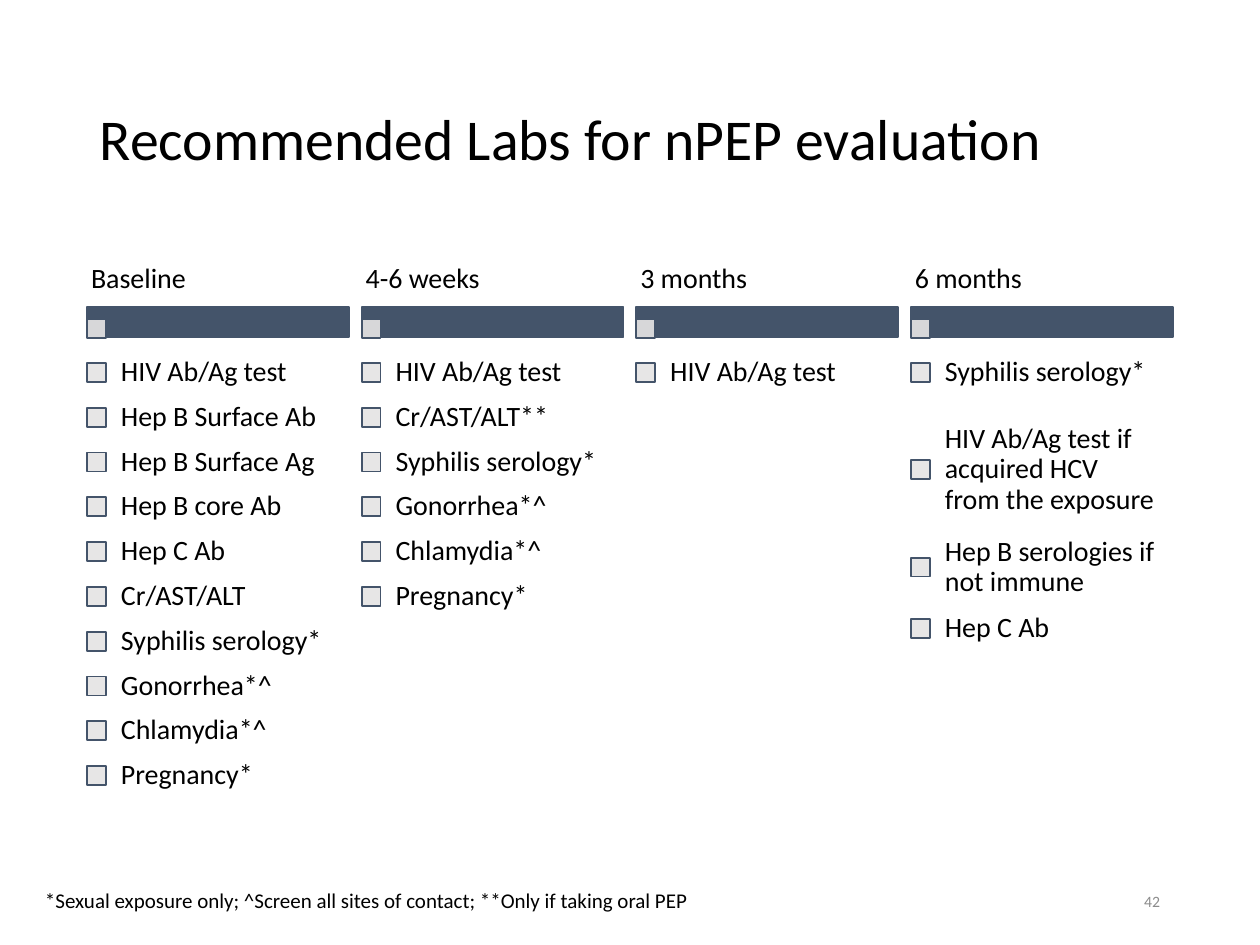
from lxml import etree
from pptx import Presentation
from pptx.dml.color import RGBColor
from pptx.enum import shapes, text
from pptx.oxml.ns import qn
from pptx.util import Emu, Pt

PX = 914400 // 126
SLATE = RGBColor(0x44, 0x54, 0x6A)
PALE = RGBColor(0xE7, 0xE6, 0xE6)
BLACK = RGBColor(0, 0, 0)
GREY = RGBColor(0x8C, 0x8C, 0x8C)

TITLE = "Recommended Labs for nPEP evaluation"
FOOTNOTE = "*Sexual exposure only; ^Screen all sites of contact; **Only if taking oral PEP"
PAGE_NUMBER = "42"
# Each visit: heading and its labs
VISITS = [
    ("Baseline", ["HIV Ab/Ag test", "Hep B Surface Ab", "Hep B Surface Ag",
                  "Hep B core Ab", "Hep C Ab", "Cr/AST/ALT", "Syphilis serology*",
                  "Gonorrhea*^", "Chlamydia*^", "Pregnancy*"]),
    ("4-6 weeks", ["HIV Ab/Ag test", "Cr/AST/ALT**", "Syphilis serology*",
                   "Gonorrhea*^", "Chlamydia*^", "Pregnancy*"]),
    ("3 months", ["HIV Ab/Ag test"]),
    ("6 months", ["Syphilis serology*",
                  "HIV Ab/Ag test if acquired HCV\vfrom the exposure",
                  "Hep B serologies if not immune", "Hep C Ab"]),
]
# Rows taller than the regular pitch, in px
TALL_ROWS = {("6 months", 1): 150, ("6 months", 3): 78}

LEFT, RIGHT, COLUMN_W = 87, 1173, 262
HEADING_TOP, BAR_TOP, BAR_H = 252, 307, 30
LIST_TOP, LIST_BOTTOM = 350, 798
BOX = 19
COLUMN_STEP = (RIGHT - LEFT - COLUMN_W) / (len(VISITS) - 1)
ROW_H = (LIST_BOTTOM - LIST_TOP) / max(len(labs) for _, labs in VISITS)


def px(*lengths):
    return [Emu(round(length * PX)) for length in lengths]


def add_rect(slide, x, y, w, h, color, opacity=100):
    rect = slide.shapes.add_shape(shapes.MSO_SHAPE.RECTANGLE, *px(x, y, w, h))
    rect.shadow.inherit = False
    rect.fill.solid()
    rect.fill.fore_color.rgb = color
    rect.line.color.rgb = SLATE
    rect.line.width = Pt(1)
    if opacity < 100:
        srgb = rect.fill._xPr.find(qn("a:solidFill")).find(qn("a:srgbClr"))
        etree.SubElement(srgb, qn("a:alpha")).set("val", str(opacity * 1000))


def add_text(slide, x, y, w, h, words, size, color=BLACK, insets=(13, 6),
             anchor=text.MSO_ANCHOR.MIDDLE, align=text.PP_ALIGN.LEFT, spacing=0.9):
    frame = slide.shapes.add_textbox(*px(x, y, w, h)).text_frame
    frame.word_wrap = True
    frame.vertical_anchor = anchor
    frame.margin_left, frame.margin_top = px(*insets)
    frame.margin_right, frame.margin_bottom = px(*insets)
    frame.text = words
    paragraph = frame.paragraphs[0]
    paragraph.alignment = align
    paragraph.line_spacing = spacing
    for run in paragraph.runs:
        run.font.name = "Calibri"
        run.font.size = Pt(size)
        run.font.color.rgb = color


def add_visit(slide, x, heading, labs):
    add_rect(slide, x, BAR_TOP, COLUMN_W, BAR_H, SLATE)
    add_rect(slide, x, BAR_TOP + BAR_H - BOX + 1, BOX, BOX, PALE, opacity=90)
    add_text(slide, x, HEADING_TOP, COLUMN_W, BAR_TOP - HEADING_TOP, heading, 16,
             insets=(4, 3))
    y = LIST_TOP
    for row, lab in enumerate(labs):
        height = TALL_ROWS.get((heading, row), ROW_H)
        add_rect(slide, x, y + (height - BOX) / 2, BOX, BOX, PALE)
        add_text(slide, x + BOX, y, COLUMN_W - BOX, height, lab, 16, insets=(15, 15))
        y += height


def main():
    deck = Presentation()
    deck.slide_width, deck.slide_height = px(1260, 945)
    slide = deck.slides.add_slide(deck.slide_layouts[6])
    add_text(slide, LEFT, 50, RIGHT - LEFT, 183, TITLE, 33)
    for column, (heading, labs) in enumerate(VISITS):
        add_visit(slide, LEFT + column * COLUMN_STEP, heading, labs)
    add_text(slide, 890, 876, RIGHT - 890, 50, PAGE_NUMBER, 9, GREY,
             align=text.PP_ALIGN.RIGHT, spacing=1.0)
    add_text(slide, 32, 882, 987, 38, FOOTNOTE, 12,
             anchor=text.MSO_ANCHOR.TOP, spacing=1.0)
    deck.save("out.pptx")


if __name__ == "__main__":
    main()
